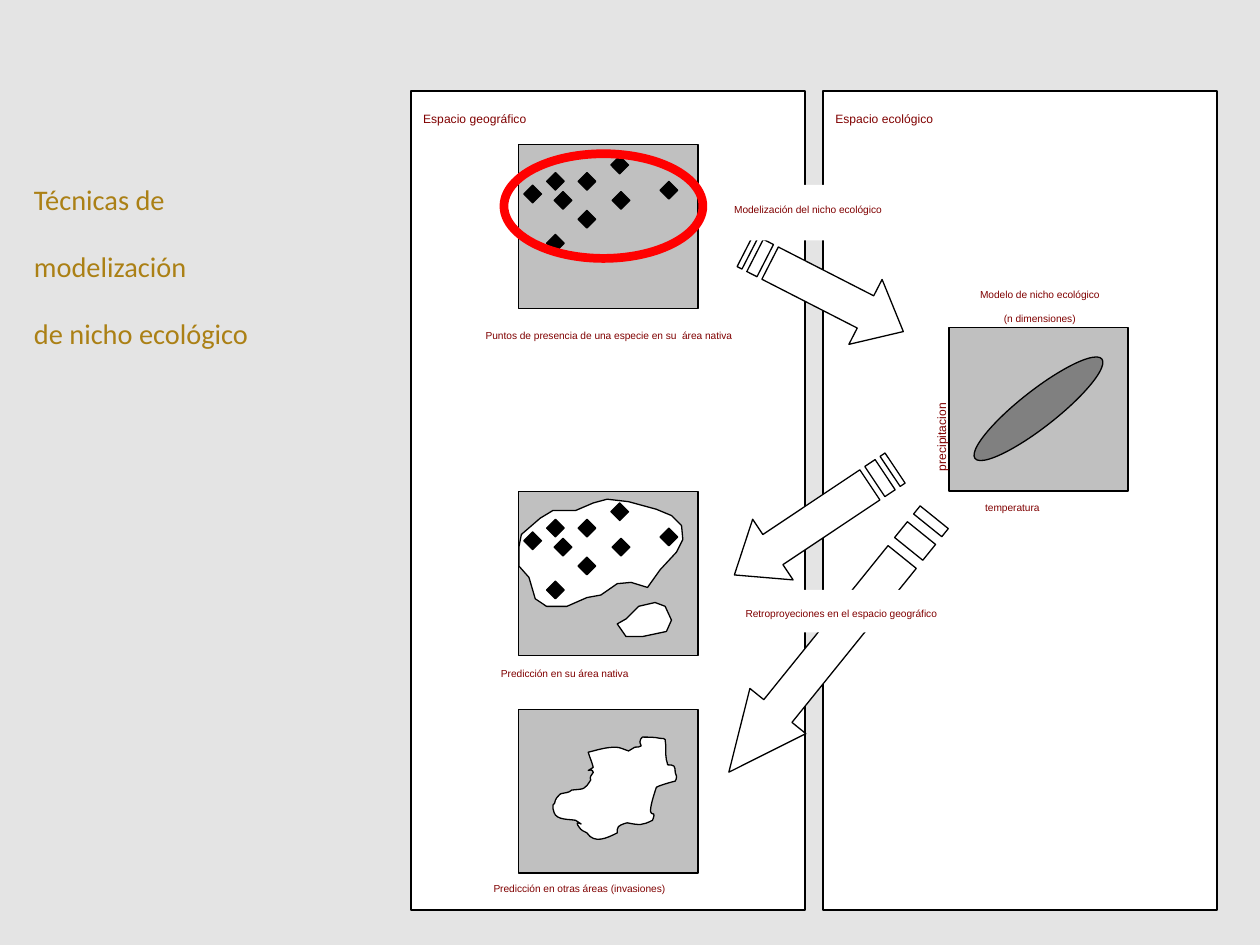
from pptx import Presentation
from pptx.dml.color import RGBColor
from pptx.enum import shapes as kinds, text as t
from pptx.oxml.ns import qn
from pptx.util import Cm, Pt

MAP_SIZE = 3.61, 3.3
MAP_UNITS = 142
OCCURRENCES = [(22, 22), (28, 37), (47, 22), (4, 32), (73, 9),
               (22, 71), (47, 52), (74, 37), (112, 29)]
NATIVE_AREA = [
    (17, 21), (27, 15), (45, 15), (59, 9), (70, 6), (87, 8), (109, 14), (121, 19),
    (129, 27), (130, 38), (125, 48), (112, 62), (102, 76), (89, 72), (78, 73), (65, 82),
    (54, 84), (38, 91), (22, 91), (13, 85), (8, 68), (0, 59), (0, 44), (2, 34)]
NATIVE_ISLAND = [(85, 101), (78, 105), (85, 115), (98, 115), (117, 111),
                 (121, 102), (116, 91), (108, 88), (95, 91)]
INVADED_AREA = [
    (57, 56),
    (52, 64), (52, 63), (42, 64), (41, 65), (39, 66), (38, 66),
    (36, 67), (33, 66), (32, 68), (30, 69), (30, 71), (29, 72),
    (29, 74), (28, 75), (27, 76), (27, 78), (27, 80), (28, 82),
    (30, 88), (40, 87), (45, 88), (57, 96), (40, 84), (49, 95),
    (51, 97), (53, 97), (54, 98), (60, 107), (70, 102), (78, 98),
    (78, 96), (78, 94), (79, 93), (81, 91), (86, 90), (86, 90),
    (96, 92), (98, 92), (106, 88), (111, 75), (98, 95), (109, 62),
    (109, 61), (123, 57), (124, 57), (125, 56), (125, 54), (125, 53),
    (125, 52), (124, 51), (124, 50), (124, 48), (124, 46), (123, 45),
    (122, 44), (120, 44), (118, 44), (118, 42), (117, 41), (117, 40),
    (116, 35), (117, 29), (116, 24), (116, 23), (114, 23), (112, 23),
    (108, 22), (103, 22), (98, 22), (97, 23), (96, 24), (96, 26),
    (95, 27), (98, 28), (97, 29), (96, 30), (94, 30), (92, 30),
    (90, 31), (89, 32), (87, 33), (84, 32), (80, 30), (77, 30),
    (69, 30), (63, 32), (55, 34), (58, 43), (57, 39), (59, 46),
    (50, 52), (58, 45), (59, 50), (59, 51), (57, 52), (57, 53),
    (56, 54), (57, 55), (57, 56)]


def color(value):
    """Turn a hex string into a colour."""
    return RGBColor.from_string(value)


def paint(shape, fill=None, line="000000", width=0.75):
    """Give a shape its fill and outline, without shadow."""
    shape.shadow.inherit = False
    if fill:
        shape.fill.solid()
        shape.fill.fore_color.rgb = color(fill)
    else:
        shape.fill.background()
    if line:
        shape.line.color.rgb = color(line)
        shape.line.width = Pt(width)
    else:
        shape.line.fill.background()
    return shape


def write(shape, words, size=10, align=t.PP_ALIGN.LEFT, anchor=t.MSO_ANCHOR.TOP,
          font="Arial", ink="800000"):
    """Fill a shape with lowered text."""
    frame = shape.text_frame
    frame.text = words
    frame.word_wrap = True
    frame.auto_size = t.MSO_AUTO_SIZE.NONE
    frame.vertical_anchor = anchor
    for paragraph in frame.paragraphs:
        paragraph.alignment = align
        for run in paragraph.runs:
            run.font.size, run.font.name = Pt(size), font
            run.font.color.rgb = color(ink)
            run.font._element.set("baseline", "-25000")


def add_preset(slide, kind, box, **style):
    """Add a painted preset shape in a box of centimetres."""
    shape = slide.shapes.add_shape(kind, *map(Cm, box))
    return paint(shape, **style)


def add_caption(slide, box, words, **style):
    """Add a plain caption."""
    caption = slide.shapes.add_textbox(*map(Cm, box))
    write(caption, words, **style)
    return caption


def add_outline(slide, left, top, scale, *contours):
    """Add a white closed outline of contours given in whole units of the scale."""
    first, *others = contours
    builder = slide.shapes.build_freeform(*first[0], scale=scale)
    builder.add_line_segments(first[1:])
    for contour in others:
        builder.move_to(*contour[0])
        builder.add_line_segments(contour[1:])
    return paint(builder.convert_to_shape(Cm(left), Cm(top)), "FFFFFF")


def bend(outline):
    """Turn every three line segments into one Bézier curve."""
    segments = iter(outline._element.xpath(".//a:lnTo"))
    for curve, *rest in zip(segments, segments, segments):
        for segment in rest:
            curve.append(segment[0])
            segment.getparent().remove(segment)
        curve.tag = qn("a:cubicBezTo")


def add_panel(slide, box, heading):
    """Add a white panel with its heading."""
    panel = add_preset(slide, kinds.MSO_SHAPE.RECTANGLE, box, fill="FFFFFF", width=1)
    write(panel, heading, 12)


def add_map(slide, left, top, areas=(), occurrences=()):
    """Add a grey map with white areas and black occurrence points."""
    add_preset(slide, kinds.MSO_SHAPE.RECTANGLE, (left, top, *MAP_SIZE), fill="C0C0C0")
    unit = MAP_SIZE[0] / MAP_UNITS
    outlines = [add_outline(slide, left, top, Cm(unit), area) for area in areas]
    for x, y in occurrences:
        box = left + x * unit, top + y * unit, 14 * unit, 14 * unit
        add_preset(slide, kinds.MSO_SHAPE.DIAMOND, box, fill="000000")
    return outlines


def add_striped_arrow(slide, box, rotation):
    """Add a block arrow whose tail is cut into two stripes."""
    left, top, width, height = box

    def corner(across, down):
        """Turn fractions of the arrow box into hundredths of a centimetre."""
        return round(100 * across * width), round(100 * down * height)

    def stripe(start, end):
        """Give the corners of a stripe counted in 32nds of the width."""
        a, b = start / 32, end / 32
        return [corner(a, 0.25), corner(b, 0.25), corner(b, 0.75), corner(a, 0.75)]

    tail, neck = 5 / 32, 0.76
    body = [corner(tail, 0.25), corner(neck, 0.25), corner(neck, 0), corner(1, 0.5),
            corner(neck, 1), corner(neck, 0.75), corner(tail, 0.75)]
    arrow = add_outline(slide, left, top, Cm(0.01), body, stripe(2, 4), stripe(0, 1))
    arrow.rotation = rotation


def add_label(slide, box, words):
    """Add a white label without outline."""
    label = add_preset(slide, kinds.MSO_SHAPE.RECTANGLE, box, fill="FFFFFF", line=None)
    write(label, words)


def add_geographic_space(slide, box):
    """Add the panel of presence points and predicted areas."""
    add_panel(slide, box, "Espacio geográfico")
    left, top = box[0] + 2.18, box[1]
    presence, native, invaded = top + 1.09, top + 8.08, top + 12.47
    add_map(slide, left, presence, occurrences=OCCURRENCES)
    add_caption(slide, (left - 2.05, presence + 3.35, 7.72, 1.09),
                "Puntos de presencia de una especie en su  área nativa",
                align=t.PP_ALIGN.CENTER)
    add_map(slide, left, native, [NATIVE_AREA, NATIVE_ISLAND], OCCURRENCES)
    add_caption(slide, (left - 0.61, native + 3.18, 5.44, 1.09),
                "Predicción en su área nativa")
    bend(add_map(slide, left, invaded, [INVADED_AREA])[0])
    add_caption(slide, (left - 0.76, invaded + 3.12, 5.05, 0.79),
                "Predicción en otras áreas (invasiones)")
    add_preset(slide, kinds.MSO_SHAPE.OVAL, (left - 0.3, presence + 0.18, 4.01, 2.11),
               line="FF0000", width=5)


def add_ecological_space(slide, box):
    """Add the panel of the niche model."""
    add_panel(slide, box, "Espacio ecológico")
    left, top = box[0] + 2.54, box[1] + 4.77
    add_map(slide, left, top)
    niche = add_preset(slide, kinds.MSO_SHAPE.OVAL, (left + 0.18, top + 1.27, 3.25, 0.74),
                       fill="808080")
    niche.rotation = 321.9
    add_caption(slide, (left + 0.48, top + 3.15, 3.61, 1.09), "temperatura")
    add_caption(slide, (left - 0.89, top - 1.14, 5.44, 1.32),
                "Modelo de nicho ecológico\n(n dimensiones)", align=t.PP_ALIGN.CENTER)
    rainfall = add_caption(slide, (left - 1.78, top + 1.32, 2.9, 0.76),
                           "precipitacion", size=12)
    rainfall.rotation = 270


def add_title(slide, box):
    """Place and format the slide title."""
    title = slide.shapes.title
    title.left, title.top, title.width, title.height = map(Cm, box)
    write(title, "Técnicas de\nmodelización\nde nicho ecológico", 28,
          anchor=t.MSO_ANCHOR.BOTTOM, font="Calibri", ink="AB8015")


def main():
    """Build and save the slide."""
    deck = Presentation()
    deck.slide_width, deck.slide_height = Cm(25.4), Cm(19.05)
    slide = deck.slides.add_slide(deck.slide_layouts[5])
    slide.background.fill.solid()
    slide.background.fill.fore_color.rgb = color("E4E4E4")
    add_title(slide, (0.43, 2.74, 8, 4.45))
    add_geographic_space(slide, (8.28, 1.83, 7.95, 16.51))
    add_ecological_space(slide, (16.59, 1.83, 7.95, 16.51))
    add_striped_arrow(slide, (14.83, 5.13, 3.58, 1.47), 27.1)
    add_label(slide, (14.55, 3.73, 5.44, 1.12), "Modelización del nicho ecológico")
    add_striped_arrow(slide, (14.48, 9.78, 3.89, 1.47), 146.3)
    add_striped_arrow(slide, (13.46, 12.27, 6.6, 1.45), 128.9)
    add_label(slide, (14.78, 11.89, 6.5, 0.86), "Retroproyeciones en el espacio geográfico")
    deck.save("out.pptx")


if __name__ == "__main__":
    main()
